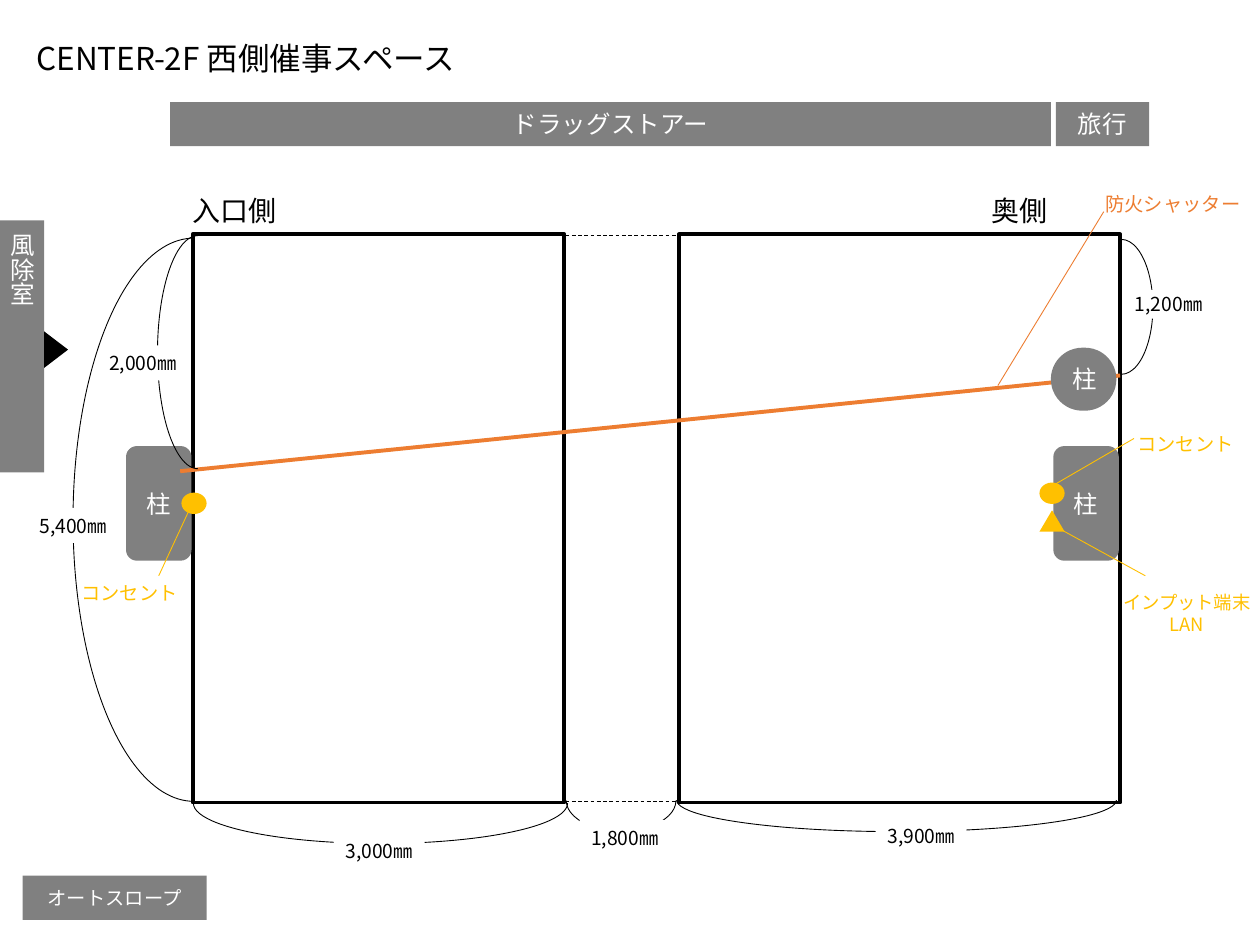
from dataclasses import dataclass

from lxml.etree import SubElement
from pptx import Presentation
from pptx.dml.color import RGBColor
from pptx.enum.dml import MSO_LINE
from pptx.enum.shapes import MSO_CONNECTOR, MSO_SHAPE
from pptx.enum.text import MSO_ANCHOR, PP_ALIGN
from pptx.oxml.ns import qn
from pptx.util import Inches, Pt


@dataclass(frozen=True)
class Theme:
    font: str = "Noto Sans CJK JP"
    ink: str = "000000"
    paper: str = "FFFFFF"
    block: str = "808080"
    shutter: str = "ED7D31"
    outlet: str = "FFC000"
    title: float = 18
    side: float = 16
    body: float = 14
    small: float = 11
    note: float = 10.5
    thick: float = 2.25
    thin: float = 0.5


@dataclass(frozen=True)
class Box:
    left: float
    top: float
    width: float
    height: float

    def inner(self, left, top, width, height):
        return Box(self.left + left, self.top + top, width, height)

    def point(self, x, y):
        return self.left + x, self.top + y

    def emu(self):
        return [Inches(v) for v in (self.left, self.top, self.width, self.height)]


THEME = Theme()


def write(shape, text, size, color, align=PP_ALIGN.CENTER, anchor=MSO_ANCHOR.MIDDLE):
    frame = shape.text_frame
    frame.text = text
    frame.word_wrap = True
    frame.vertical_anchor = anchor
    paragraph = frame.paragraphs[0]
    paragraph.alignment = align
    font = paragraph.runs[0].font
    font.size = Pt(size)
    font.color.rgb = RGBColor.from_string(color)
    font.name = THEME.font
    SubElement(font._element, qn("a:ea"), typeface=THEME.font)


def add_label(slide, box, text, size, color, **layout):
    write(slide.shapes.add_textbox(*box.emu()), text, size, color, **layout)


def add_block(slide, box, kind=MSO_SHAPE.RECTANGLE, fill=None, line=None, width=THEME.thin):
    shape = slide.shapes.add_shape(kind, *box.emu())
    shape.shadow.inherit = False
    if fill:
        shape.fill.solid()
        shape.fill.fore_color.rgb = RGBColor.from_string(fill)
    else:
        shape.fill.background()
    if line:
        shape.line.color.rgb = RGBColor.from_string(line)
        shape.line.width = Pt(width)
    else:
        shape.line.fill.background()
    return shape


def add_sign(slide, box, text, size=THEME.body, kind=MSO_SHAPE.RECTANGLE):
    shape = add_block(slide, box, kind, fill=THEME.block)
    write(shape, text, size, THEME.paper)
    return shape


def add_line(slide, start, end, color, width=THEME.thin, dash=None):
    ends = [Inches(v) for v in (*start, *end)]
    connector = slide.shapes.add_connector(MSO_CONNECTOR.STRAIGHT, *ends)
    connector.line.color.rgb = RGBColor.from_string(color)
    connector.line.width = Pt(width)
    if dash:
        connector.line.dash_style = dash
    SubElement(connector._element.spPr, qn("a:effectLst"))


def add_dimension(slide, arc, rotation, label, text):
    """Draw a half-oval bracket and a white label that interrupts it."""
    bracket = add_block(slide, arc, MSO_SHAPE.LEFT_BRACKET, line=THEME.ink)
    bracket.adjustments[0] = round(arc.height / arc.width / 2, 2)
    bracket.rotation = rotation
    tag = add_block(slide, label, fill=THEME.paper)
    write(tag, text, THEME.small, THEME.ink)
    frame = tag.text_frame
    frame.margin_left = frame.margin_right = frame.margin_top = frame.margin_bottom = 0


def draw_header(slide, box):
    add_label(slide, box.inner(0, 0, 4.61, 0.4), "CENTER-2F 西側催事スペース",
              THEME.title, THEME.ink, align=PP_ALIGN.LEFT, anchor=MSO_ANCHOR.TOP)
    for left, width, shop in ((1.16, 6.99, "ドラッグストアー"), (8.19, 0.74, "旅行")):
        add_sign(slide, box.inner(left, 0.55, width, 0.35), shop)


def draw_vestibule(slide, box):
    """Draw the entrance lobby with vertical text and an arrow to the floor."""
    sign = add_sign(slide, box, "風除室")
    frame = sign.text_frame
    frame.paragraphs[0].alignment = PP_ALIGN.LEFT
    frame.margin_left = frame.margin_right = Inches(0.05)
    frame.margin_top = frame.margin_bottom = Inches(0.1)
    frame._txBody.bodyPr.set("vert", "eaVert")
    arrow = add_block(slide, box.inner(0.3, 0.93, 0.29, 0.19),
                      MSO_SHAPE.ISOSCELES_TRIANGLE, fill=THEME.ink)
    arrow.rotation = 90


def draw_rooms(slide, box):
    for left, width in ((0, 2.95), (3.86, 3.5)):
        add_block(slide, box.inner(left, 0, width, box.height),
                  line=THEME.ink, width=THEME.thick)
    for y in (0.01, box.height - 0.01):
        add_line(slide, box.point(2.96, y), box.point(3.86, y), THEME.ink, dash=MSO_LINE.DASH)
    for left, width, text in ((-0.1, 0.93, "入口側"), (6.24, 0.72, "奥側")):
        add_label(slide, box.inner(left, -0.37, width, 0.37), text, THEME.side,
                  THEME.ink, align=PP_ALIGN.LEFT, anchor=MSO_ANCHOR.TOP)


def draw_pillars_and_shutter(slide, box):
    for left in (-0.53, 6.83):
        add_sign(slide, box.inner(left, 1.68, 0.52, 0.91), "柱",
                 kind=MSO_SHAPE.ROUNDED_RECTANGLE)
    add_line(slide, box.point(-0.1, 1.88), box.point(7.36, 1.12), THEME.shutter, THEME.thick)
    add_line(slide, box.point(7.23, -0.18), box.point(6.39, 1.2), THEME.shutter)
    add_label(slide, box.inner(7.05, -0.37, 1.46, 0.25), "防火シャッター",
              THEME.small, THEME.shutter)
    round_pillar = add_sign(slide, box.inner(6.81, 0.9, 0.52, 0.5), "柱",
                            kind=MSO_SHAPE.ROUNDED_RECTANGLE)
    round_pillar.adjustments[0] = 0.5


def draw_outlets(slide, box):
    outlets = (
        (MSO_SHAPE.OVAL, (-0.09, 2.05), ((-0.02, 2.17), (-0.27, 2.71)),
         (-1.23, 2.67, 1.46, 0.35), "コンセント", THEME.small),
        (MSO_SHAPE.OVAL, (6.72, 1.97), ((7.47, 1.62), (6.85, 1.98)),
         (7.33, 1.49, 1.1, 0.35), "コンセント", THEME.small),
        (MSO_SHAPE.FLOWCHART_EXTRACT, (6.72, 2.19), ((6.83, 2.31), (7.56, 2.71)),
         (7.23, 2.89, 1.32, 0.23), "インプット端末LAN", THEME.note),
    )
    for kind, corner, (start, end), label, text, size in outlets:
        add_block(slide, box.inner(*corner, 0.2, 0.17), kind, fill=THEME.outlet)
        add_line(slide, box.point(*start), box.point(*end), THEME.outlet)
        add_label(slide, box.inner(*label), text, size, THEME.outlet)


def draw_dimensions(slide, box):
    left_side, right_side, below = 0, 180, 270
    dimensions = (
        ((-0.95, 0.03, 0.96, 4.47), left_side, (-1.31, 2.17, 0.72, 0.28), "5,400㎜"),
        ((-0.28, 0.01, 0.32, 1.85), left_side, (-0.73, 0.88, 0.67, 0.28), "2,000㎜"),
        ((7.37, 0.04, 0.25, 1.07), right_side, (7.43, 0.44, 0.63, 0.23), "1,200㎜"),
        ((1.33, 3.19, 0.32, 2.97), below, (1.12, 4.75, 0.72, 0.28), "3,000㎜"),
        ((3.28, 4.18, 0.24, 0.87), below, (3.07, 4.65, 0.72, 0.28), "1,800㎜"),
        ((5.46, 2.87, 0.25, 3.49), below, (5.42, 4.63, 0.72, 0.28), "3,900㎜"),
    )
    for arc, rotation, label, text in dimensions:
        add_dimension(slide, box.inner(*arc), rotation, box.inner(*label), text)


def draw_floor_plan(slide, box):
    draw_rooms(slide, box)
    draw_pillars_and_shutter(slide, box)
    draw_outlets(slide, box)
    draw_dimensions(slide, box)


def main():
    presentation = Presentation()
    presentation.slide_width = Inches(10)
    presentation.slide_height = Inches(7.5)
    slide = presentation.slides.add_slide(presentation.slide_layouts[6])
    draw_header(slide, Box(0.19, 0.26, 8.93, 0.9))
    draw_floor_plan(slide, Box(1.53, 1.86, 7.36, 4.51))
    draw_vestibule(slide, Box(0, 1.75, 0.35, 2))
    add_sign(slide, Box(0.18, 6.95, 1.46, 0.35), "オートスロープ", THEME.small)
    presentation.save("out.pptx")


if __name__ == "__main__":
    main()
